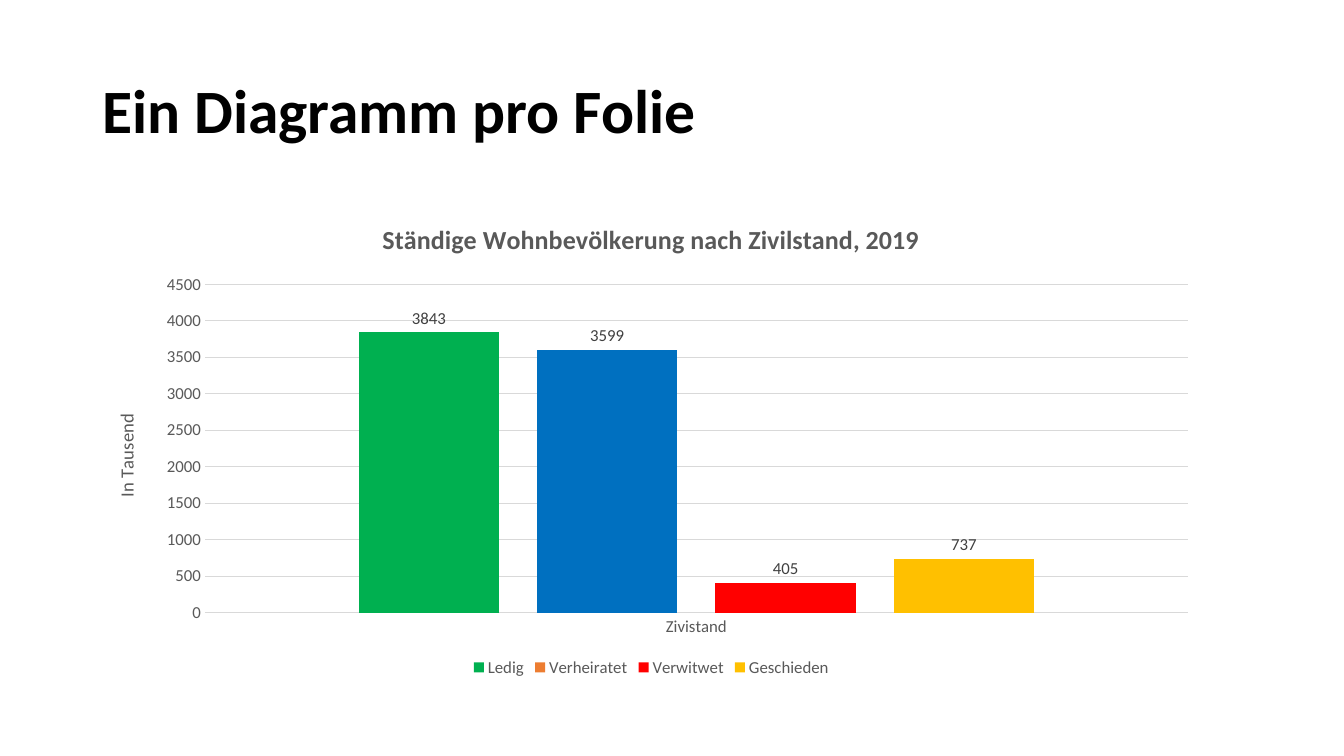
from dataclasses import dataclass

from pptx import Presentation
from pptx import util as u
from pptx.chart import data as cd
from pptx.dml import color as dml
from pptx.enum import chart as ch, text as tx

Pt = u.Pt
rgb = dml.RGBColor.from_string


@dataclass(frozen=True)
class Theme:
    face: str = "Calibri"
    black: str = "000000"
    grey: str = "595959"
    dark: str = "404040"
    rule: str = "D9D9D9"
    green: str = "00B050"
    orange: str = "ED7D31"
    blue: str = "0070C0"
    red: str = "FF0000"
    gold: str = "FFC000"
    head: float = 44
    title: float = 18.6
    axis: float = 13.3
    small: float = 12


theme = Theme()


def style(font, size=theme.small, color=theme.grey, bold=False):
    font.name, font.size, font.bold = theme.face, Pt(size), bold
    font.color.rgb = rgb(color)


def write(frame, text, space=None, **form):
    para = frame.paragraphs[0]
    para.line_spacing = space
    run = para.add_run()
    run.text = text
    style(run.font, **form)


deck = Presentation()
deck.slide_width, deck.slide_height = Pt(960), Pt(540)
slide = deck.slides.add_slide(deck.slide_layouts[6])

# Heading
head = slide.shapes.add_textbox(Pt(66), Pt(28.75), Pt(828), Pt(104.4)).text_frame
head.word_wrap = True
head.vertical_anchor = tx.MSO_ANCHOR.MIDDLE
write(head, "Ein Diagramm pro Folie", space=0.9,
      size=theme.head, color=theme.black, bold=True)

# Chart: name, value, series colour, bar colour
groups = [
    ("Ledig", 3843, theme.green, theme.green),
    ("Verheiratet", 3599, theme.orange, theme.blue),
    ("Verwitwet", 405, theme.red, theme.red),
    ("Geschieden", 737, theme.gold, theme.gold),
]
data = cd.CategoryChartData()
data.categories = ["Zivistand"]
for name, value, *_ in groups:
    data.add_series(name, [value])
chart = slide.shapes.add_chart(
    ch.XL_CHART_TYPE.COLUMN_CLUSTERED,
    Pt(66), Pt(144), Pt(798.5), Pt(342.7), data).chart
style(chart.font)
write(chart.chart_title.text_frame,
      "Ständige Wohnbevölkerung nach Zivilstand, 2019",
      size=theme.title, bold=True)
chart.chart_title.include_in_layout = False

chart.has_legend = True
chart.legend.position = ch.XL_LEGEND_POSITION.BOTTOM
chart.legend.include_in_layout = False
style(chart.legend.font)

# Axes
cat, val = chart.category_axis, chart.value_axis
for axis in (cat, val):
    axis.major_tick_mark = axis.minor_tick_mark = ch.XL_TICK_MARK.NONE
    style(axis.tick_labels.font)
val.minimum_scale, val.maximum_scale, val.major_unit = 0, 4500, 500
val.format.line.fill.background()
for line in (cat.format.line, val.major_gridlines.format.line):
    line.color.rgb = rgb(theme.rule)
    line.width = Pt(0.75)
write(val.axis_title.text_frame, "In Tausend", size=theme.axis)

# Bars
plot = chart.plots[0]
plot.gap_width, plot.overlap = 219, -27
plot.vary_by_categories = False
for bar, (_, _, tone, fill) in zip(plot.series, groups):
    bar.format.fill.solid()
    bar.format.fill.fore_color.rgb = rgb(tone)
    if fill != tone:
        point = bar.points[0].format.fill
        point.solid()
        point.fore_color.rgb = rgb(fill)
    label = bar.data_labels
    label.show_value = True
    label.position = ch.XL_LABEL_POSITION.OUTSIDE_END
    style(label.font, color=theme.dark)

deck.save("out.pptx")
